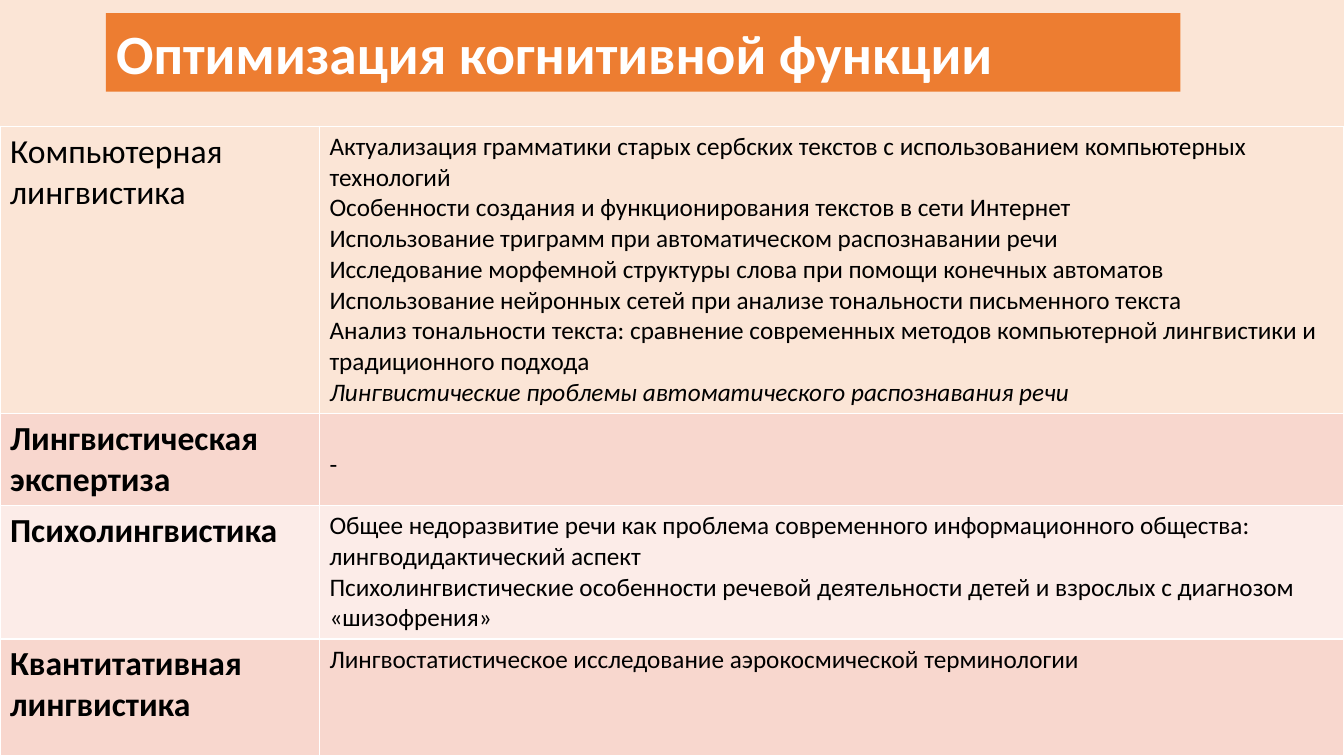
from dataclasses import dataclass

from lxml.etree import SubElement
from pptx import Presentation
from pptx.dml.color import RGBColor as Rgb
from pptx.enum.text import MSO_ANCHOR as Anchor, MSO_AUTO_SIZE as AutoSize, PP_ALIGN as Align
from pptx.oxml.ns import qn
from pptx.util import Cm, Pt


@dataclass(frozen=True)
class Theme:
    font: str = "Calibri"
    peach: str = "FBE5D6"
    orange: str = "ED7D31"
    rose: str = "F8D7CE"
    pale_rose: str = "FCECE8"
    white: str = "FFFFFF"
    black: str = "000000"
    title_size: float = 39.6
    field_size: float = 24
    topic_size: float = 18
    border_width: float = 1


theme = Theme()


def add_run(paragraph, text, size, color, bold=False, italic=False):
    run = paragraph.add_run()
    run.text = text
    run.font.name = theme.font
    run.font.size = Pt(size)
    run.font.bold = bold
    run.font.italic = italic
    run.font.color.rgb = Rgb.from_string(color)


def add_borders(cell):
    """Draw all four cell borders; call before the fill, which must follow them in the XML."""
    properties = cell._tc.get_or_add_tcPr()
    for side in ("a:lnL", "a:lnR", "a:lnT", "a:lnB"):
        line = SubElement(properties, qn(side), w=str(Pt(theme.border_width)))
        SubElement(SubElement(line, qn("a:solidFill")), qn("a:srgbClr"), val=theme.white)


presentation = Presentation()
presentation.slide_width, presentation.slide_height = Cm(33.87), Cm(19.05)
slide = presentation.slides.add_slide(presentation.slide_layouts[5])
slide.background.fill.solid()
slide.background.fill.fore_color.rgb = Rgb.from_string(theme.peach)

# Title
title = slide.shapes.title
title.left, title.top, title.width, title.height = Cm(2.67), Cm(0.33), Cm(27.08), Cm(1.98)
title.fill.solid()
title.fill.fore_color.rgb = Rgb.from_string(theme.orange)
title.text_frame.auto_size = AutoSize.NONE
title.text_frame.vertical_anchor = Anchor.MIDDLE
heading = title.text_frame.paragraphs[0]
heading.alignment = Align.LEFT
add_run(heading, "Оптимизация когнитивной функции", theme.title_size, theme.white, bold=True)

# Fields of linguistics: name, bold name, row height in cm, fill, topics (text, italic)
fields = [
    ("Компьютерная лингвистика", False, 7.24, theme.peach, [
        ("Актуализация грамматики старых сербских текстов с использованием компьютерных технологий", False),
        ("Особенности создания и функционирования текстов в сети Интернет", False),
        ("Использование триграмм при автоматическом распознавании речи", False),
        ("Исследование морфемной структуры слова при помощи конечных автоматов", False),
        ("Использование нейронных сетей при анализе тональности письменного текста", False),
        ("Анализ тональности текста: сравнение современных методов компьютерной лингвистики "
         "и традиционного подхода", False),
        ("Лингвистические проблемы автоматического распознавания речи", True),
    ]),
    ("Лингвистическая экспертиза", True, 2.32, theme.rose, [("-", False)]),
    ("Психолингвистика", True, 3.36, theme.pale_rose, [
        ("Общее недоразвитие речи как проблема современного информационного общества: "
         "лингводидактический аспект", False),
        ("Психолингвистические особенности речевой деятельности детей и взрослых "
         "с диагнозом «шизофрения»", False),
    ]),
    ("Квантитативная лингвистика", True, 2.95, theme.rose, [
        ("Лингвостатистическое исследование аэрокосмической терминологии", False),
    ]),
]

table_height = sum(field[2] for field in fields)
table = slide.shapes.add_table(
    len(fields), 2, Cm(0), Cm(3.18), presentation.slide_width, Cm(table_height)).table
table.first_row = False
table.horz_banding = False
table.columns[0].width = Cm(8.05)
table.columns[1].width = Cm(25.82)

for index, (name, bold, height, fill, topics) in enumerate(fields):
    table.rows[index].height = Cm(height)
    name_cell, topics_cell = table.cell(index, 0), table.cell(index, 1)
    for cell in (name_cell, topics_cell):
        add_borders(cell)
        cell.fill.solid()
        cell.fill.fore_color.rgb = Rgb.from_string(fill)
    add_run(name_cell.text_frame.paragraphs[0], name, theme.field_size, theme.black, bold)

    frame = topics_cell.text_frame
    for number, (topic, italic) in enumerate(topics):
        paragraph = frame.add_paragraph() if number else frame.paragraphs[0]
        add_run(paragraph, topic, theme.topic_size, theme.black, italic=italic)

# The dash sits one line below the top of its cell
table.cell(1, 1).margin_top = Cm(0.9)

presentation.save("out.pptx")
